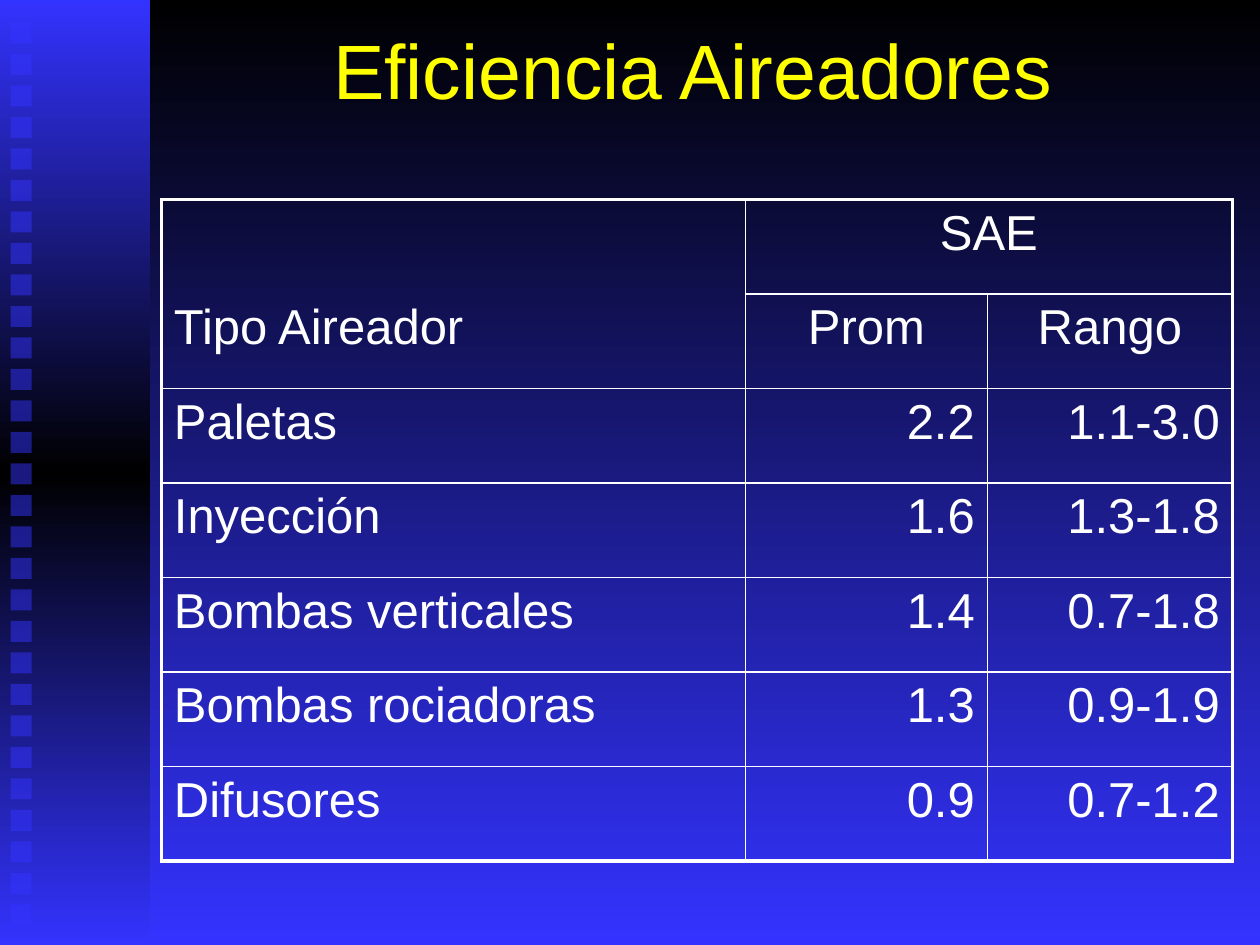
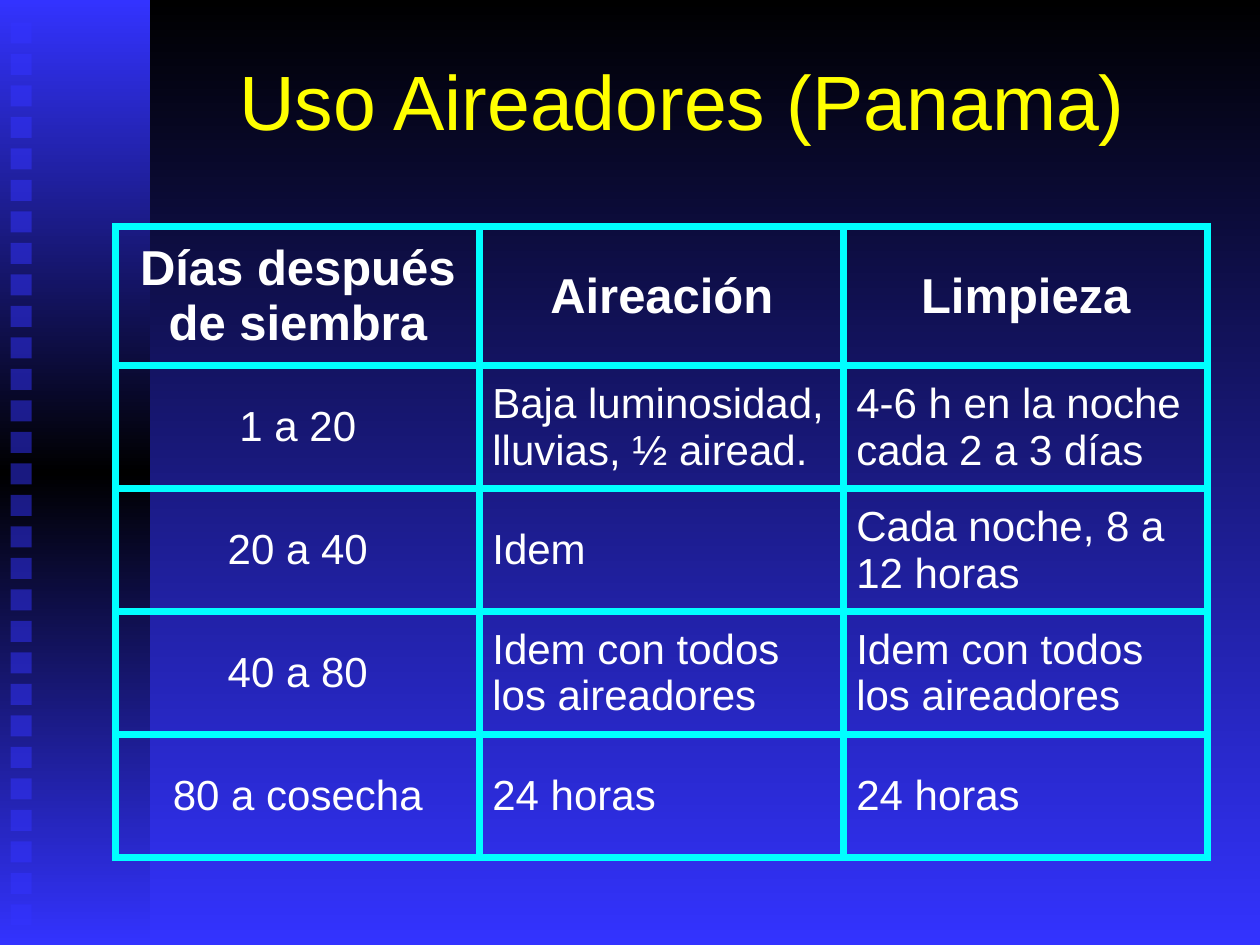
from dataclasses import dataclass

from lxml.etree import SubElement
from pptx import Presentation
from pptx.dml.color import RGBColor
from pptx.dml.fill import FillFormat
from pptx.enum.shapes import MSO_SHAPE
from pptx.enum.text import MSO_ANCHOR, MSO_AUTO_SIZE, PP_ALIGN
from pptx.oxml.ns import qn
from pptx.oxml.xmlchemy import BaseOxmlElement
from pptx.shapes.autoshape import Shape
from pptx.slide import Slide
from pptx.table import _Cell as Cell
from pptx.text.text import _Paragraph as Paragraph
from pptx.util import Pt

BLACK = RGBColor(0x00, 0x00, 0x00)
BLUE = RGBColor(0x33, 0x33, 0xFF)
YELLOW = RGBColor(0xFF, 0xFF, 0x00)
WHITE = RGBColor(0xFF, 0xFF, 0xFF)
CYAN = RGBColor(0x00, 0xFF, 0xFF)

FONT = "Arial"
SLIDE_WIDTH, SLIDE_HEIGHT = 720, 540
BAND_WIDTH = 85.8
SQUARE_COUNT, SQUARE_PITCH, SQUARE_SIZE = 29, 18, 12
SQUARE_LEFT, SQUARE_TOP = 6.1, 12.8
TITLE_WIDTH, TITLE_HEIGHT = 612, 90
LEFT, CENTER, RIGHT = PP_ALIGN.LEFT, PP_ALIGN.CENTER, PP_ALIGN.RIGHT


@dataclass(frozen=True)
class Borders:
    color: RGBColor
    outer: float
    inner: float


@dataclass(frozen=True)
class RowStyle:
    size: float
    bold: bool
    aligns: tuple[PP_ALIGN, ...]


@dataclass(frozen=True)
class TableSlide:
    title: str
    title_left: float
    title_top: float
    left: float
    top: float
    widths: list[float]
    heights: list[float]
    rows: list[tuple[str, ...]]
    header_rows: int
    header: RowStyle
    body: RowStyle
    anchor: MSO_ANCHOR
    borders: Borders
    merged: tuple[tuple[int, int], ...] = ()  # cells joined with the next column
    open_below: tuple[tuple[int, int], ...] = ()  # cells with no line under them


EFFICIENCY = TableSlide(
    title="Eficiencia Aireadores", title_left=90, title_top=-6,
    left=92.2, top=114, widths=[333.8, 138.2, 140], heights=[54] * 7,
    rows=[
        ("", "SAE", ""),
        ("Tipo Aireador", "Prom", "Rango"),
        ("Paletas", "2.2", "1.1-3.0"),
        ("Inyección", "1.6", "1.3-1.8"),
        ("Bombas verticales", "1.4", "0.7-1.8"),
        ("Bombas rociadoras", "1.3", "0.9-1.9"),
        ("Difusores", "0.9", "0.7-1.2"),
    ],
    header_rows=2,
    header=RowStyle(28, False, (LEFT, CENTER, CENTER)),
    body=RowStyle(28, False, (LEFT, RIGHT, RIGHT)),
    anchor=MSO_ANCHOR.TOP,
    borders=Borders(WHITE, outer=2.25, inner=1),
    merged=((0, 1),),
    open_below=((0, 0),),
)

USAGE = TableSlide(
    title="Uso Aireadores (Panama)", title_left=84, title_top=12,
    left=66.2, top=129.5, widths=[208] * 3, heights=[79.6] + [70.2] * 4,
    rows=[
        ("Días después de siembra", "Aireación", "Limpieza"),
        ("1 a 20", "Baja luminosidad, lluvias, ½ airead.",
         "4-6 h en la noche cada 2 a 3 días"),
        ("20 a 40", "Idem", "Cada noche, 8 a 12 horas"),
        ("40 a 80", "Idem con todos los aireadores", "Idem con todos los aireadores"),
        ("80 a cosecha", "24 horas", "24 horas"),
    ],
    header_rows=1,
    header=RowStyle(28, True, (CENTER, CENTER, CENTER)),
    body=RowStyle(24, False, (CENTER, LEFT, LEFT)),
    anchor=MSO_ANCHOR.MIDDLE,
    borders=Borders(CYAN, outer=4.5, inner=4.5),
)


def add_color(parent: BaseOxmlElement, color: RGBColor) -> BaseOxmlElement:
    return SubElement(parent, qn("a:srgbClr"), val=str(color))


def fill_downwards(fill: FillFormat, owner: BaseOxmlElement, colors: list[RGBColor]) -> None:
    """Give the fill a vertical gradient with evenly spaced colours."""
    fill.gradient()
    fill.gradient_angle = 270
    stops = next(owner.iter(qn("a:gsLst")))
    for stop in list(stops):
        stops.remove(stop)
    for i, color in enumerate(colors):
        position = 100000 * i // (len(colors) - 1)
        add_color(SubElement(stops, qn("a:gs"), pos=str(position)), color)


def add_rectangle(slide: Slide, left: float, top: float, width: float, height: float) -> Shape:
    rectangle = slide.shapes.add_shape(
        MSO_SHAPE.RECTANGLE, Pt(left), Pt(top), Pt(width), Pt(height))
    rectangle.shadow.inherit = False
    rectangle.line.fill.background()
    return rectangle


def add_side_band(slide: Slide) -> None:
    band = add_rectangle(slide, 0, 0, BAND_WIDTH, SLIDE_HEIGHT)
    fill_downwards(band.fill, band.element, [BLUE, BLACK, BLUE])
    for i in range(SQUARE_COUNT):
        square = add_rectangle(slide, SQUARE_LEFT, SQUARE_TOP + i * SQUARE_PITCH,
                               SQUARE_SIZE, SQUARE_SIZE)
        square.fill.solid()
        square.fill.fore_color.rgb = BLUE
        color = next(square.element.spPr.iter(qn("a:srgbClr")))
        SubElement(color, qn("a:alpha"), val="50000")


def write(paragraph: Paragraph, text: str, size: float, color: RGBColor,
          align: PP_ALIGN, bold: bool = False) -> None:
    paragraph.alignment = align
    run = paragraph.add_run()
    run.text = text
    run.font.name = FONT
    run.font.size = Pt(size)
    run.font.bold = bold
    run.font.color.rgb = color


def place_title(slide: Slide, content: TableSlide) -> None:
    title = slide.shapes.title
    title.left, title.top = Pt(content.title_left), Pt(content.title_top)
    title.width, title.height = Pt(TITLE_WIDTH), Pt(TITLE_HEIGHT)
    frame = title.text_frame
    frame.auto_size = MSO_AUTO_SIZE.NONE
    frame.vertical_anchor = MSO_ANCHOR.MIDDLE
    write(frame.paragraphs[0], content.title, 44, YELLOW, CENTER)


def draw_borders(cell: Cell, row: int, column: int, content: TableSlide) -> None:
    borders = content.borders
    last_row, last_column = len(content.heights) - 1, len(content.widths) - 1
    end_column = column + cell.span_width - 1 if cell.is_merge_origin else column

    def weight(at_edge: bool) -> float:
        return borders.outer if at_edge else borders.inner

    weights = {
        "a:lnL": 0 if cell.is_spanned else weight(column == 0),
        "a:lnR": weight(end_column == last_column),
        "a:lnT": 0 if (row - 1, column) in content.open_below else weight(row == 0),
        "a:lnB": 0 if (row, column) in content.open_below else weight(row == last_row),
    }
    properties = cell._tc.get_or_add_tcPr()
    for tag, points in weights.items():
        line = SubElement(properties, qn(tag), w=str(Pt(points)))
        if points:
            add_color(SubElement(line, qn("a:solidFill")), borders.color)
        else:
            SubElement(line, qn("a:noFill"))


def add_data_table(slide: Slide, content: TableSlide) -> None:
    table = slide.shapes.add_table(
        len(content.heights), len(content.widths), Pt(content.left), Pt(content.top),
        Pt(sum(content.widths)), Pt(sum(content.heights))).table
    table.first_row = table.horz_banding = False
    for column, width in zip(table.columns, content.widths):
        column.width = Pt(width)
    for row, height in zip(table.rows, content.heights):
        row.height = Pt(height)
    for row, column in content.merged:
        table.cell(row, column).merge(table.cell(row, column + 1))

    for r, texts in enumerate(content.rows):
        style = content.header if r < content.header_rows else content.body
        for c, (text, align) in enumerate(zip(texts, style.aligns)):
            cell = table.cell(r, c)
            draw_borders(cell, r, c, content)
            cell.fill.background()
            cell.vertical_anchor = content.anchor
            if text:
                write(cell.text_frame.paragraphs[0], text, style.size, WHITE,
                      align, style.bold)


def main() -> None:
    deck = Presentation()
    deck.slide_width, deck.slide_height = Pt(SLIDE_WIDTH), Pt(SLIDE_HEIGHT)
    master = deck.slide_master
    fill_downwards(master.background.fill, master.element, [BLACK, BLUE])
    title_only = deck.slide_layouts.get_by_name("Title Only")
    for content in (EFFICIENCY, USAGE):
        slide = deck.slides.add_slide(title_only)
        add_side_band(slide)
        place_title(slide, content)
        add_data_table(slide, content)
    deck.save("out.pptx")


if __name__ == "__main__":
    main()
